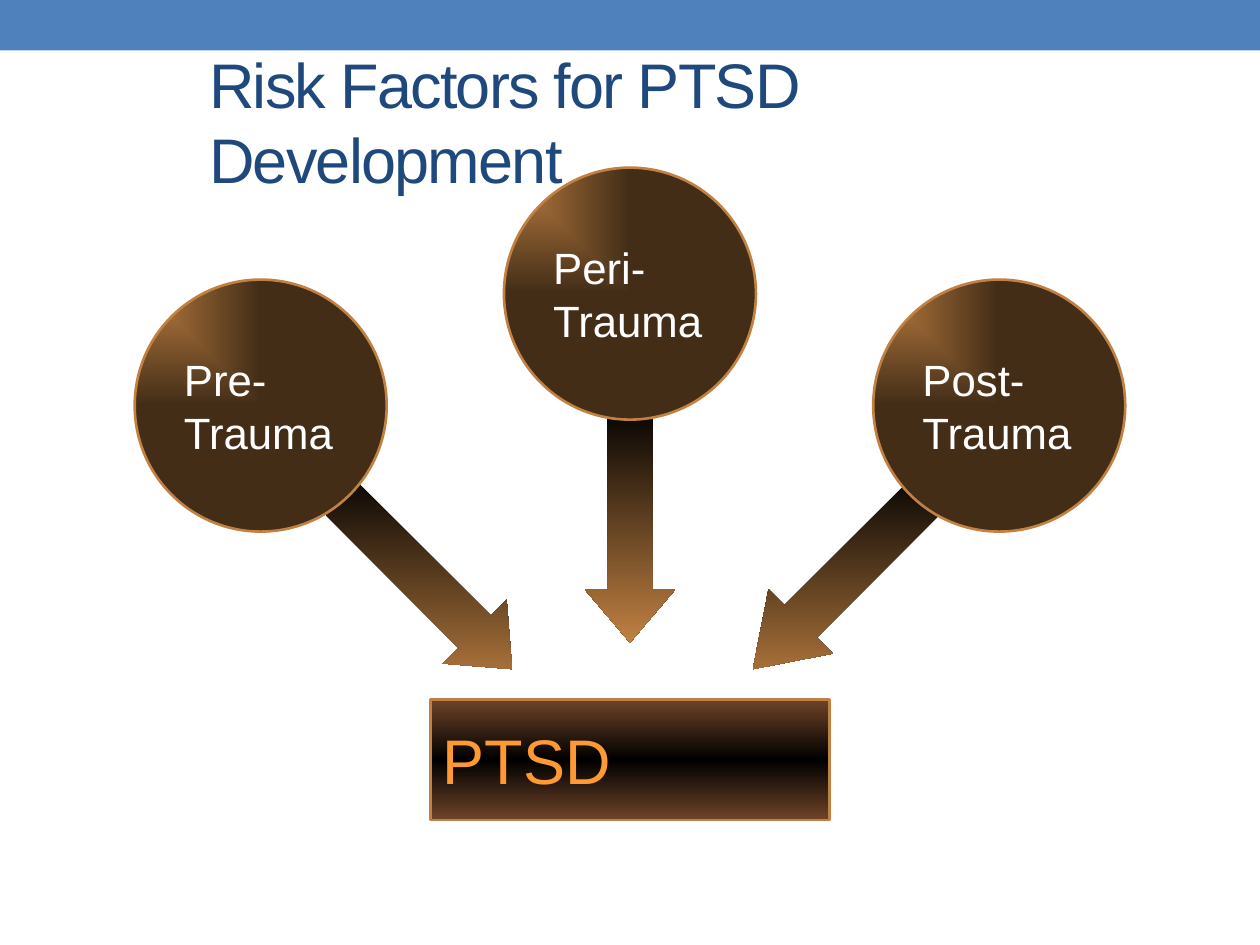
from pptx import Presentation
from pptx.dml.color import RGBColor
from pptx.enum.shapes import MSO_SHAPE
from pptx.enum.text import MSO_ANCHOR, MSO_AUTO_SIZE, PP_ALIGN
from pptx.oxml import parse_xml
from pptx.oxml.ns import nsdecls, qn
from pptx.util import Pt

RECTANGLE, CIRCLE, ARROW = MSO_SHAPE.RECTANGLE, MSO_SHAPE.OVAL, MSO_SHAPE.DOWN_ARROW
MIDDLE, LEFT, NO_FIT = MSO_ANCHOR.MIDDLE, PP_ALIGN.LEFT, MSO_AUTO_SIZE.NONE

BLUE = RGBColor(0x4F, 0x81, 0xBD)
NAVY = RGBColor(0x1F, 0x49, 0x7D)
WHITE = RGBColor(0xFF, 0xFF, 0xFF)
BLACK = RGBColor(0x00, 0x00, 0x00)
COPPER = RGBColor(0xC0, 0x81, 0x42)
DARK_BROWN = RGBColor(0x43, 0x2D, 0x17)
RUST = RGBColor(0x6F, 0x44, 0x29)
ORANGE = RGBColor(0xFF, 0x99, 0x33)

DOWNWARD = '<a:lin ang="5400000" scaled="0"/>'
FROM_CORNER = '<a:path path="rect"><a:fillToRect r="100000" b="100000"/></a:path>'

CENTER = 360
CIRCLE_SIZE = 144
ARROW_WIDTH, ARROW_HEIGHT = 51.84, 137.52


def write_text(frame, text, size, color, font="Arial", spacing=None):
    """Fill the frame with one left-aligned paragraph per line of text."""
    frame.word_wrap = True
    frame.auto_size = NO_FIT
    frame.vertical_anchor = MIDDLE
    for index, line in enumerate(text.split("\n")):
        para = frame.add_paragraph() if index else frame.paragraphs[0]
        para.alignment = LEFT
        span = para.add_run()
        span.text = line
        span.font.name = font
        span.font.size = Pt(size)
        span.font.color.rgb = color
        if spacing is not None:
            span.font._element.set("spc", str(spacing * 100))


def apply_gradient(shape, colors, direction):
    """Spread the colors evenly; the gradient stays upright when the shape turns."""
    step = 100000 // (len(colors) - 1)
    stops = "".join(
        f'<a:gs pos="{index * step}"><a:srgbClr val="{color}"/></a:gs>'
        for index, color in enumerate(colors)
    )
    shape.fill.gradient()
    properties = shape._element.spPr
    properties.replace(
        properties.find(qn("a:gradFill")),
        parse_xml(
            f'<a:gradFill {nsdecls("a")} rotWithShape="0">'
            f"<a:gsLst>{stops}</a:gsLst>{direction}</a:gradFill>"
        ),
    )


class RiskSlide:
    def __init__(self, page):
        self.page = page

    def title(self, text, left, top, width, height):
        box = self.page.shapes.title
        box.left, box.top, box.width, box.height = map(Pt, (left, top, width, height))
        write_text(box.text_frame, text, 36, NAVY, spacing=-1)

    def shape(self, kind, left, top, width, height, outline=None):
        shape = self.page.shapes.add_shape(kind, *map(Pt, (left, top, width, height)))
        shape.shadow.inherit = False
        if outline is None:
            shape.line.fill.background()
        else:
            shape.line.color.rgb = outline
            shape.line.width = Pt(1.5)
        return shape

    def bar(self, width, height):
        bar = self.shape(RECTANGLE, 0, 0, width, height)
        bar.fill.solid()
        bar.fill.fore_color.rgb = BLUE

    def arrow(self, center, top, rotation, head):
        arrow = self.shape(ARROW, center - ARROW_WIDTH / 2, top, ARROW_WIDTH, ARROW_HEIGHT)
        arrow.adjustments[1] = head
        arrow.rotation = rotation
        apply_gradient(arrow, [BLACK, COPPER], DOWNWARD)

    def circle(self, text, center, top):
        circle = self.shape(
            CIRCLE, center - CIRCLE_SIZE / 2, top, CIRCLE_SIZE, CIRCLE_SIZE, COPPER
        )
        apply_gradient(circle, [COPPER, DARK_BROWN], FROM_CORNER)
        circle.text_frame.margin_right = 0
        write_text(circle.text_frame, text, 25, WHITE)

    def outcome(self, text, left, top, width, height):
        box = self.shape(RECTANGLE, left, top, width, height, COPPER)
        apply_gradient(box, [RUST, BLACK, RUST], DOWNWARD)
        write_text(box.text_frame, text, 36, ORANGE)


def main():
    deck = Presentation()
    deck.slide_width, deck.slide_height = Pt(720), Pt(540)
    slide = RiskSlide(deck.slides.add_slide(deck.slide_layouts[5]))

    slide.bar(720, 28.8)
    slide.title("Risk Factors for PTSD Development", 112.3, 0, 550, 138.2)
    for center, top, rotation, head in (
        (CENTER, 229.7, 0, 0.587),
        (244.1, 265, 315, 0.587),
        (478.8, 265, 45, 0.743),
    ):
        slide.arrow(center, top, rotation, head)
    for column, (text, top) in enumerate(
        (("Pre-\nTrauma", 159.8), ("Peri-\nTrauma", 95.8), ("Post-\nTrauma", 159.8))
    ):
        slide.circle(text, CENTER + (column - 1) * 211, top)
    slide.outcome("PTSD", 246, 399.6, 228, 69.1)

    deck.save("out.pptx")


if __name__ == "__main__":
    main()
